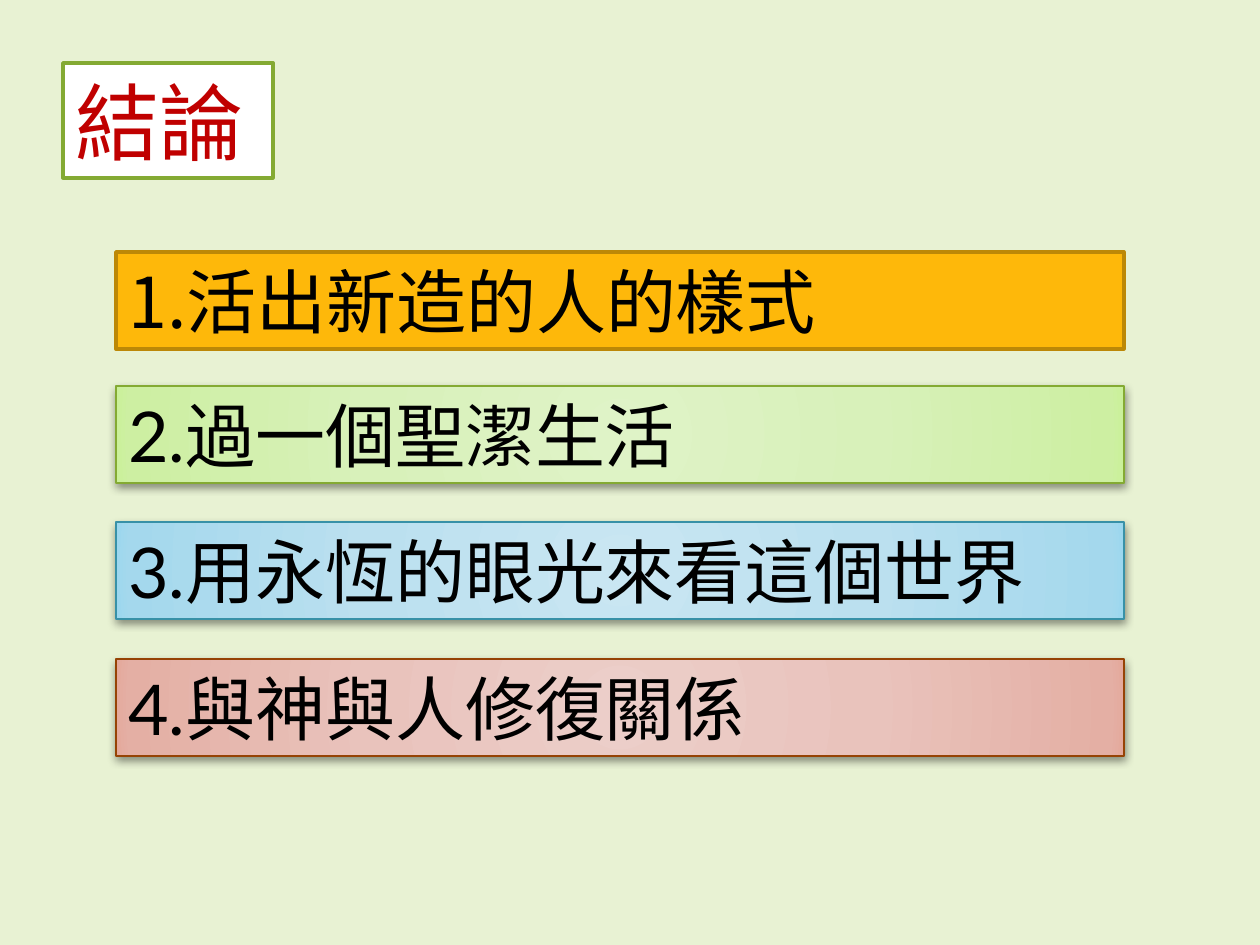
from dataclasses import dataclass

from lxml.etree import SubElement
from pptx import Presentation
from pptx.dml.color import RGBColor
from pptx.enum.shapes import MSO_SHAPE
from pptx.enum.text import MSO_ANCHOR, MSO_AUTO_SIZE, PP_ALIGN
from pptx.oxml.ns import qn
from pptx.util import Pt

PX = 914400 / 126  # EMU in one px


def px(n):
    return round(n * PX)


@dataclass(frozen=True)
class Theme:
    font: str = "Lato"
    title_size: int = 48
    item_size: int = 40
    background: str = "E8F2D3"
    white: str = "FFFFFF"
    text: str = "000000"
    title: str = "C00000"
    green: str = "84AA33"
    amber: str = "FEB80A"
    amber_line: str = "BC8807"
    blue_line: str = "3891A7"
    red_line: str = "964305"
    # Glows run from the centre to the edge
    green_glow: tuple = ("DFF3C7", "D8F1BA", "CDEFA2", "CAF199")
    blue_glow: tuple = ("C9E6F2", "BBE0EF", "A4D8ED", "9BD7EE")
    red_glow: tuple = ("ECCEC9", "E9C3BC", "E4AFA4", "E4A89B")
    glow_stops: tuple = (0, 50, 97, 100)


def add(parent, tag, **attrs):
    return SubElement(parent, qn(tag), {k: str(v) for k, v in attrs.items()})


class SlideBuilder:
    def __init__(self, prs, theme):
        self.theme = theme
        self.slide = prs.slides.add_slide(prs.slide_layouts[6])
        fill = self.slide.background.fill
        fill.solid()
        fill.fore_color.rgb = RGBColor.from_string(theme.background)

    def box(self, left, top, width, height, fill, line, weight):
        sp = self.slide.shapes.add_shape(
            MSO_SHAPE.RECTANGLE, px(left), px(top), px(width), px(height))
        sp.shadow.inherit = False
        if isinstance(fill, tuple):
            self.glow(sp, fill)
            self.drop_shadow(sp)
        else:
            sp.fill.solid()
            sp.fill.fore_color.rgb = RGBColor.from_string(fill)
        sp.line.color.rgb = RGBColor.from_string(line)
        sp.line.width = Pt(weight)
        return sp

    def glow(self, sp, colors):
        sp.fill.gradient()
        grad = sp._element.spPr.find(qn("a:gradFill"))
        for child in list(grad):
            grad.remove(child)
        stops = add(grad, "a:gsLst")
        for pos, color in zip(self.theme.glow_stops, colors):
            add(add(stops, "a:gs", pos=pos * 1000), "a:srgbClr", val=color)
        centre = dict.fromkeys("ltrb", 50000)
        circle = SubElement(grad, qn("a:path"), {"path": "circle"})
        add(circle, "a:fillToRect", **centre)

    def drop_shadow(self, sp):
        effects = sp._element.spPr.find(qn("a:effectLst"))
        shadow = add(effects, "a:outerShdw", blurRad=Pt(5), dist=Pt(2),
                     dir=90 * 60000, rotWithShape=0)
        add(add(shadow, "a:srgbClr", val=self.theme.text), "a:alpha", val=43000)

    def label(self, sp, text, size, color, anchor):
        tf = sp.text_frame
        frame_format = {"word_wrap": True, "vertical_anchor": anchor,
                        "auto_size": MSO_AUTO_SIZE.SHAPE_TO_FIT_TEXT}
        for name, value in frame_format.items():
            setattr(tf, name, value)
        p = tf.paragraphs[0]
        p.alignment = PP_ALIGN.LEFT
        r = p.add_run()
        r.text = text
        for name, value in {"name": self.theme.font, "size": Pt(size)}.items():
            setattr(r.font, name, value)
        r.font.color.rgb = RGBColor.from_string(color)
        return p

    def title(self, text):
        t = self.theme
        sp = self.box(63, 63, 210, 115, t.white, t.green, 2)
        self.label(sp, text, t.title_size, t.title, MSO_ANCHOR.MIDDLE)

    def item(self, top, text, fill, line, weight=0.75, numbered=False):
        t = self.theme
        sp = self.box(116, top, 1008, 97, fill, line, weight)
        p = self.label(sp, text, t.item_size, t.text, MSO_ANCHOR.TOP)
        pPr = p._p.get_or_add_pPr()
        pPr.set("marL", str(px(48)))
        pPr.set("indent", str(-px(48)))
        if numbered:
            add(pPr, "a:buFont", typeface=t.font)
            add(pPr, "a:buAutoNum", type="arabicPeriod")


def main():
    prs = Presentation()
    prs.slide_width, prs.slide_height = px(1260), px(945)
    t = Theme()
    s = SlideBuilder(prs, t)

    # Heading
    s.title("結論")

    # Four conclusions
    s.item(252, "活出新造的人的樣式", t.amber, t.amber_line, weight=2, numbered=True)
    s.item(386, "2.過一個聖潔生活", t.green_glow, t.green)
    s.item(522, "3.用永恆的眼光來看這個世界", t.blue_glow, t.blue_line)
    s.item(659, "4.與神與人修復關係", t.red_glow, t.red_line)

    prs.save("out.pptx")


if __name__ == "__main__":
    main()
